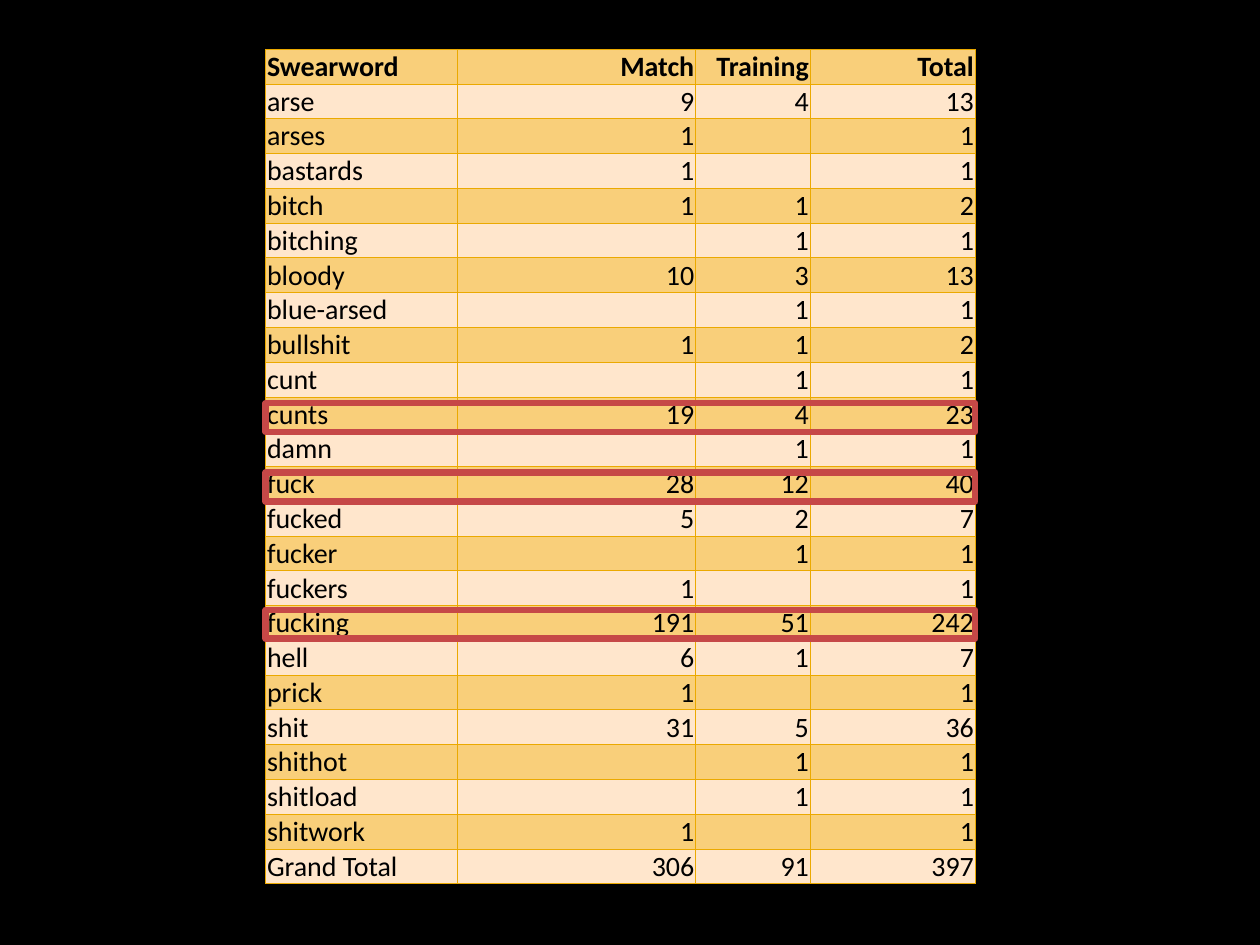
import pptx
import pptx.util
import pptx.dml.color
import pptx.enum.shapes
import pptx.enum.text
import pptx.oxml.ns
from dataclasses import dataclass
from lxml import etree

Inches = pptx.util.Inches
Pt = pptx.util.Pt
Align = pptx.enum.text.PP_ALIGN


@dataclass(frozen=True)
class Theme:
    back: str = "000000"
    ink: str = "000000"
    dark: str = "F9CF7A"
    light: str = "FFE6CC"
    rule: str = "EBA900"
    mark: str = "C64847"
    font: str = "Calibri"
    size: int = 16


THEME = Theme()
LEFT, TOP, WIDTH, HEIGHT = 2.11, 0.39, 5.63, 6.63
COLS = [1.52, 1.89, 0.91, 1.31]
MARKS = [3.2, 3.75, 4.84]
ROWS = [
    ("Swearword", "Match", "Training", "Total"),
    ("arse", 9, 4, 13),
    ("arses", 1, "", 1),
    ("bastards", 1, "", 1),
    ("bitch", 1, 1, 2),
    ("bitching", "", 1, 1),
    ("bloody", 10, 3, 13),
    ("blue-arsed", "", 1, 1),
    ("bullshit", 1, 1, 2),
    ("cunt", "", 1, 1),
    ("cunts", 19, 4, 23),
    ("damn", "", 1, 1),
    ("fuck", 28, 12, 40),
    ("fucked", 5, 2, 7),
    ("fucker", "", 1, 1),
    ("fuckers", 1, "", 1),
    ("fucking", 191, 51, 242),
    ("hell", 6, 1, 7),
    ("prick", 1, "", 1),
    ("shit", 31, 5, 36),
    ("shithot", "", 1, 1),
    ("shitload", "", 1, 1),
    ("shitwork", 1, "", 1),
    ("Grand Total", 306, 91, 397),
]


def color(code):
    return pptx.dml.color.RGBColor.from_string(code)


def add(parent, tag, **attrs):
    return etree.SubElement(parent, pptx.oxml.ns.qn(tag), **attrs)


def edge(cell):
    props = cell._tc.get_or_add_tcPr()
    for tag in ("a:lnL", "a:lnR", "a:lnT", "a:lnB"):
        line = add(props, tag, w=str(Pt(0.5)))
        add(add(line, "a:solidFill"), "a:srgbClr", val=THEME.rule)


def write(cell, value, align, bold):
    cell.margin_left = cell.margin_right = Inches(0.01)
    cell.margin_top = Pt(0.3)
    cell.margin_bottom = 0
    cell.vertical_anchor = pptx.enum.text.MSO_ANCHOR.BOTTOM
    para = cell.text_frame.paragraphs[0]
    para.alignment = align
    if value == "":
        add(para._p, "a:endParaRPr", sz=str(THEME.size * 100))
        return
    para.text = str(value)
    font = para.runs[0].font
    font.name = THEME.font
    font.size = Pt(THEME.size)
    font.bold = bold
    font.color.rgb = color(THEME.ink)


def grid(slide):
    frame = slide.shapes.add_table(
        len(ROWS), len(COLS), Inches(LEFT), Inches(TOP), Inches(WIDTH), Inches(HEIGHT)
    )
    table = frame.table
    for col, width in zip(table.columns, COLS):
        col.width = Inches(width)
    for r, row in enumerate(ROWS):
        table.rows[r].height = Inches(HEIGHT / len(ROWS))
        for c, value in enumerate(row):
            cell = table.cell(r, c)
            edge(cell)
            cell.fill.solid()
            cell.fill.fore_color.rgb = color(THEME.light if r % 2 else THEME.dark)
            write(cell, value, Align.RIGHT if c else Align.LEFT, r == 0)


def mark(slide, top):
    box = slide.shapes.add_shape(
        pptx.enum.shapes.MSO_SHAPE.RECTANGLE,
        Inches(LEFT), Inches(top), Inches(WIDTH), Inches(0.23),
    )
    box.shadow.inherit = False
    box.fill.background()
    box.line.color.rgb = color(THEME.mark)
    box.line.width = Pt(3.78)


def main():
    deck = pptx.Presentation()
    deck.slide_width = Inches(10)
    deck.slide_height = Inches(7.5)
    slide = deck.slides.add_slide(deck.slide_layouts[6])
    slide.background.fill.solid()
    slide.background.fill.fore_color.rgb = color(THEME.back)
    grid(slide)
    for top in MARKS:
        mark(slide, top)
    deck.save("out.pptx")


if __name__ == "__main__":
    main()
